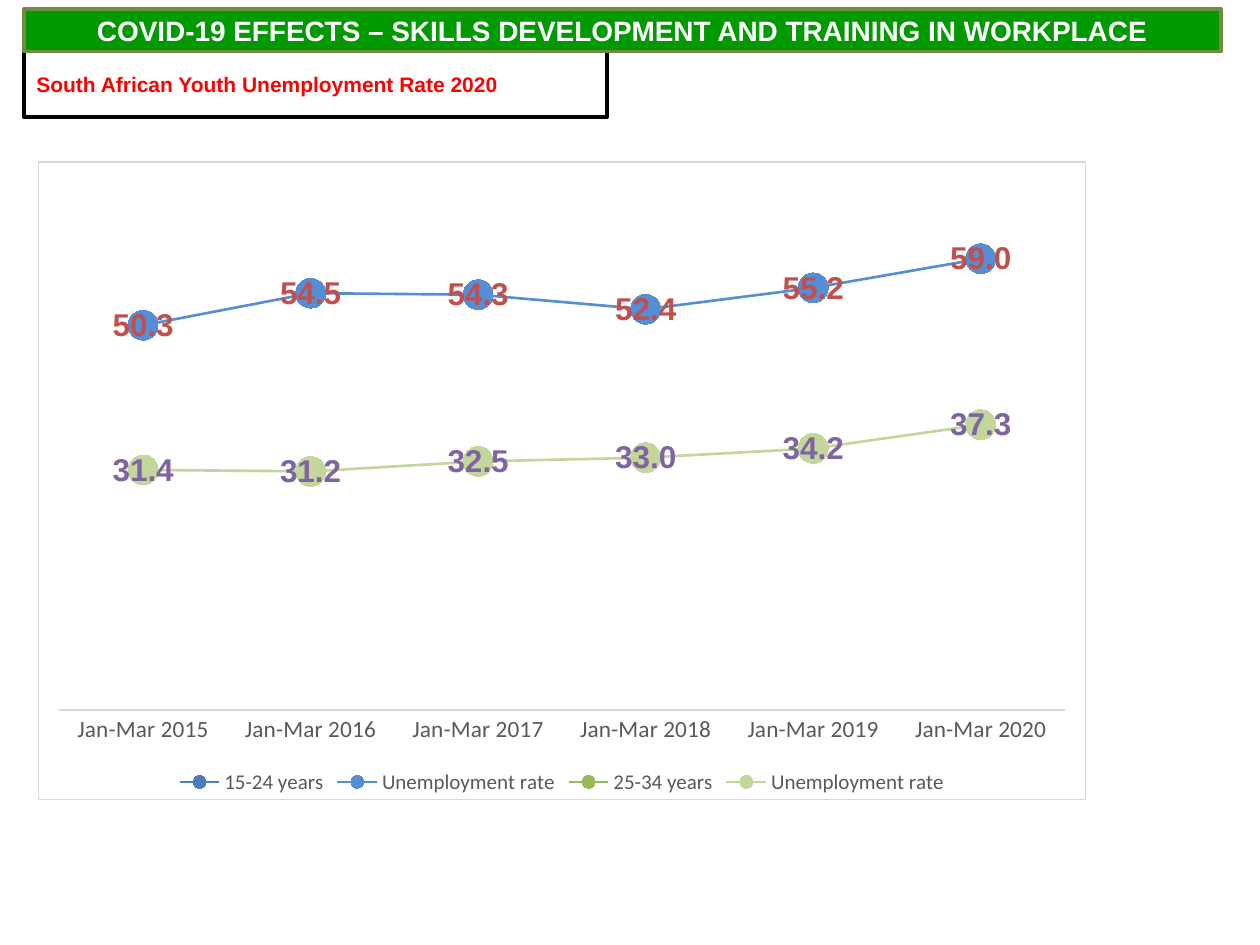
from dataclasses import dataclass

from lxml import etree
from pptx import Presentation
from pptx import util as u
from pptx.chart.data import CategoryChartData
from pptx.dml.color import RGBColor
from pptx.enum import chart as ch, shapes, text
from pptx.oxml import ns


@dataclass(frozen=True)
class Theme:
    heading_font: str = "Arial"
    chart_font: str = "Calibri"
    white: str = "FFFFFF"
    black: str = "000000"
    green: str = "009900"
    olive: str = "738A42"
    red: str = "FF0000"
    grey: str = "595959"
    rule: str = "D9D9D9"
    title_size: float = 16
    subtitle_size: float = 12
    label_size: float = 18
    axis_size: float = 13.3
    legend_size: float = 12
    chart_size: float = 10


THEME = Theme()
YEARS = range(2015, 2021)
AGE_GROUPS = [
    ("15-24 years", "4B7EBC", None, [None] * len(YEARS)),
    ("Unemployment rate", "558ED5", "C0504D", [50.3, 54.5, 54.3, 52.4, 55.2, 59.0]),
    ("25-34 years", "98B955", None, [None] * len(YEARS)),
    ("Unemployment rate", "C3D69B", "8064A2", [31.4, 31.2, 32.5, 33.0, 34.2, 37.3]),
]


def rgb(code):
    return RGBColor.from_string(code)


def place(part, box):
    part.left, part.top, part.width, part.height = map(u.Inches, box)


def paint(part, fill, line, width):
    part.fill.solid()
    part.fill.fore_color.rgb = rgb(fill)
    part.line.color.rgb = rgb(line)
    part.line.width = u.Pt(width)


def style_font(font, size, color, name, bold=False):
    font.size, font.name, font.bold = u.Pt(size), name, bold
    font.color.rgb = rgb(color)


def write(part, words, *, size, color, align, inset=0.1):
    frame = part.text_frame
    frame.word_wrap = True
    frame.auto_size = text.MSO_AUTO_SIZE.NONE
    frame.vertical_anchor = text.MSO_ANCHOR.MIDDLE
    frame.margin_left = frame.margin_right = u.Inches(inset)
    frame.margin_top = frame.margin_bottom = 0
    paragraph = frame.paragraphs[0]
    paragraph.alignment = align
    run = paragraph.add_run()
    run.text = words
    style_font(run.font, size, color, THEME.heading_font, True)


def add_title(slide, box):
    title = slide.shapes.title
    place(title, box)
    paint(title, THEME.green, THEME.olive, 2)
    write(title, "COVID-19 EFFECTS – SKILLS DEVELOPMENT AND TRAINING IN WORKPLACE",
          size=THEME.title_size, color=THEME.white, align=text.PP_ALIGN.CENTER)
    slide.shapes._spTree.append(title._element)


def add_subtitle(slide, box):
    subtitle = slide.shapes.add_shape(shapes.MSO_SHAPE.RECTANGLE, *map(u.Inches, box))
    subtitle.shadow.inherit = False
    paint(subtitle, THEME.white, THEME.black, 2)
    write(subtitle, "South African Youth Unemployment Rate 2020",
          size=THEME.subtitle_size, color=THEME.red, align=text.PP_ALIGN.LEFT)


def frame_chart(chart):
    fill_and_border = etree.fromstring(
        f'<c:spPr {ns.nsdecls("c", "a")}>'
        f'<a:solidFill><a:srgbClr val="{THEME.white}"/></a:solidFill>'
        f'<a:ln w="9525"><a:solidFill><a:srgbClr val="{THEME.rule}"/></a:solidFill></a:ln>'
        '</c:spPr>')
    chart._chartSpace.chart.addnext(fill_and_border)


def set_plot_area(chart, x, y, w, h):
    plot_area = chart._chartSpace.chart.plotArea
    for old in plot_area.findall(ns.qn("c:layout")):
        plot_area.remove(old)
    sizes = "".join(f'<c:{key} val="{value}"/>'
                    for key, value in zip("xywh", (x, y, w, h)))
    plot_area.insert(0, etree.fromstring(
        f'<c:layout {ns.nsdecls("c")}><c:manualLayout><c:layoutTarget val="inner"/>'
        f'<c:xMode val="edge"/><c:yMode val="edge"/>{sizes}'
        '</c:manualLayout></c:layout>'))


def style_series(series, color, label_color):
    series.smooth = False
    series.format.line.color.rgb = rgb(color)
    series.format.line.width = u.Pt(1.5)
    series.marker.style = ch.XL_MARKER_STYLE.CIRCLE
    series.marker.size = 17
    series.marker.format.fill.solid()
    series.marker.format.fill.fore_color.rgb = rgb(color)
    series.marker.format.line.fill.background()
    if label_color:
        labels = series.data_labels
        labels.show_value = True
        labels.position = ch.XL_LABEL_POSITION.CENTER
        labels.number_format = "#,##0.0"
        labels.number_format_is_linked = False
        style_font(labels.font, THEME.label_size, label_color, THEME.heading_font, True)


def add_rate_chart(slide, box):
    rates = CategoryChartData()
    rates.categories = [f"Jan-Mar {year}" for year in YEARS]
    for name, _, _, values in AGE_GROUPS:
        rates.add_series(name, values)
    chart = slide.shapes.add_chart(ch.XL_CHART_TYPE.LINE_MARKERS,
                                   *map(u.Inches, box), rates).chart
    style_font(chart.font, THEME.chart_size, THEME.black, THEME.chart_font)
    chart.has_title = False
    frame_chart(chart)
    set_plot_area(chart, 0.02, 0.02, 0.96, 0.84)

    chart.plots[0].vary_by_categories = False
    for series, (_, color, label_color, _) in zip(chart.plots[0].series, AGE_GROUPS):
        style_series(series, color, label_color)

    quarters = chart.category_axis
    quarters.major_tick_mark = ch.XL_TICK_MARK.NONE
    quarters.format.line.color.rgb = rgb(THEME.rule)
    quarters.format.line.width = u.Pt(0.75)
    style_font(quarters.tick_labels.font, THEME.axis_size, THEME.grey, THEME.chart_font)

    percent = chart.value_axis
    percent.minimum_scale, percent.maximum_scale = 0, 70
    percent.has_major_gridlines = False
    percent.visible = False

    chart.has_legend = True
    chart.legend.position = ch.XL_LEGEND_POSITION.BOTTOM
    chart.legend.include_in_layout = False
    style_font(chart.legend.font, THEME.legend_size, THEME.grey, THEME.chart_font)


def main():
    deck = Presentation()
    deck.slide_width, deck.slide_height = u.Inches(10), u.Inches(7.5)
    slide = deck.slides.add_slide(deck.slide_layouts[5])
    add_subtitle(slide, (0.19, 0.41, 4.63, 0.52))
    add_rate_chart(slide, (0.3, 1.28, 8.32, 5.07))
    add_title(slide, (0.19, 0.07, 9.5, 0.34))
    deck.save("out.pptx")


if __name__ == "__main__":
    main()
